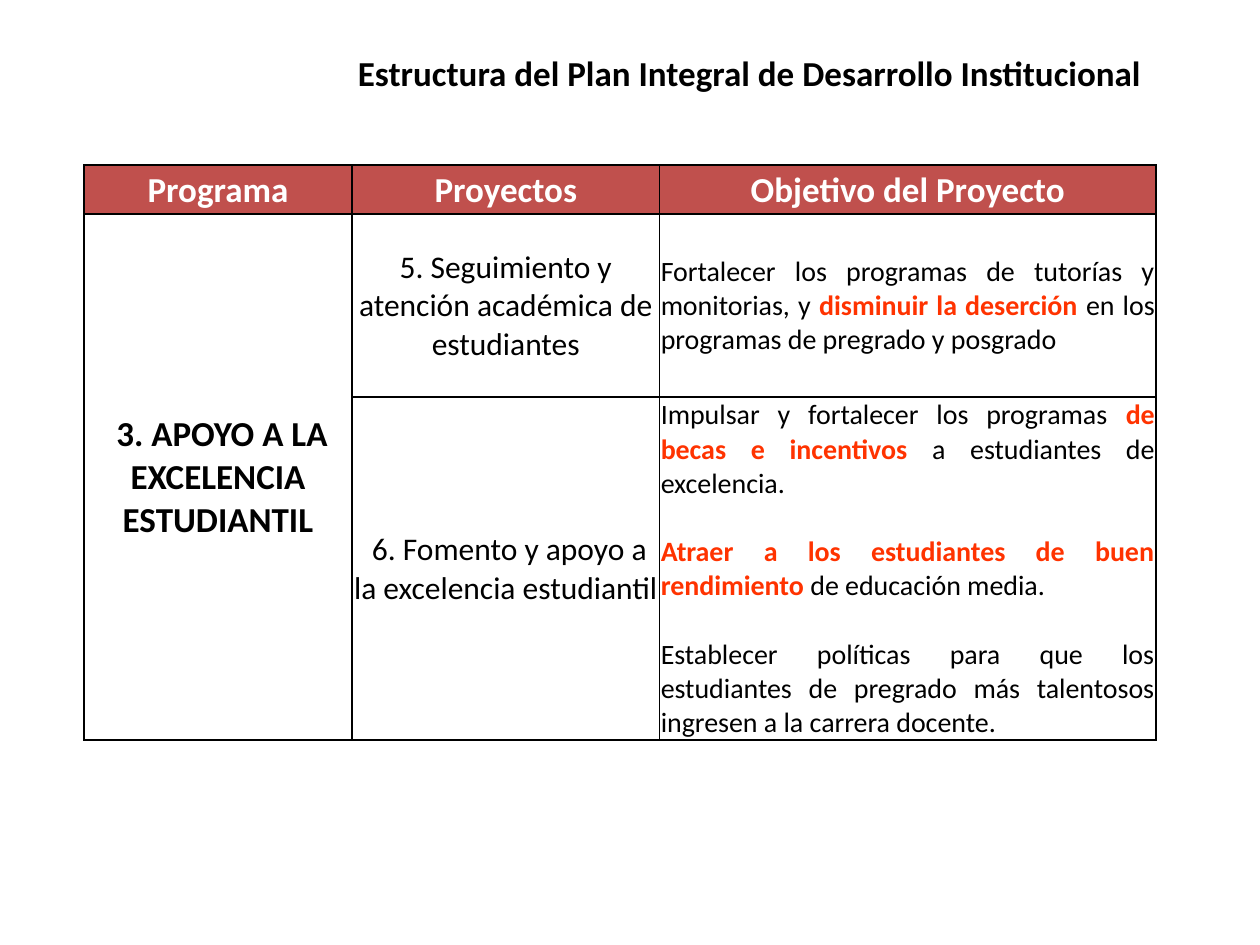
from dataclasses import dataclass

from lxml.etree import SubElement
from pptx import Presentation
from pptx.dml.color import RGBColor
from pptx.enum.text import MSO_ANCHOR as Anchor, PP_ALIGN as Align
from pptx.oxml.ns import qn
from pptx.table import Table, _Cell as Cell
from pptx.text.text import _Paragraph as Paragraph
from pptx.util import Pt


@dataclass(frozen=True)
class Theme:
    font: str = "Calibri"
    black: str = "000000"
    white: str = "FFFFFF"
    header: str = "C0504D"
    accent: str = "FF3300"
    heading_size: float = 20
    project_size: float = 18
    goal_size: float = 16
    goal_gap: float = 19.5
    border: float = 1
    inset: float = 0.72


THEME = Theme()


@dataclass(frozen=True)
class Span:
    text: str
    color: str = THEME.black
    bold: bool = False


@dataclass(frozen=True)
class Entry:
    row: int
    column: int
    size: float
    paragraphs: list[list[Span]]
    align: Align = Align.CENTER
    fill: str | None = None


def accent(text: str) -> Span:
    return Span(text, THEME.accent, True)


HEADINGS = ["Programa", "Proyectos", "Objetivo del Proyecto"]
PROGRAM = [[Span(" "), Span("3. APOYO A LA EXCELENCIA ESTUDIANTIL", bold=True)]]
PROJECTS = [
    "5. Seguimiento y atención académica de estudiantes",
    " 6. Fomento y apoyo a la excelencia estudiantil",
]
GOALS = [
    [
        [
            Span("Fortalecer los programas de tutorías y monitorias, y "),
            accent("disminuir la deserción "),
            Span("en los programas de pregrado y posgrado"),
        ],
    ],
    [
        [
            Span("Impulsar y fortalecer los programas "),
            accent("de becas e incentivos"),
            Span(" a estudiantes de excelencia."),
        ],
        [
            accent("Atraer a los estudiantes de buen rendimiento "),
            Span("de educación media."),
        ],
        [
            Span("Establecer políticas para que los estudiantes de pregrado "
                 "más talentosos ingresen a la carrera docente."),
        ],
    ],
]
ENTRIES = [
    *(Entry(0, column, THEME.heading_size, [[Span(heading, THEME.white, True)]],
            fill=THEME.header)
      for column, heading in enumerate(HEADINGS)),
    Entry(1, 0, THEME.heading_size, PROGRAM),
    *(Entry(row, 1, THEME.project_size, [[Span(project)]])
      for row, project in enumerate(PROJECTS, 1)),
    *(Entry(row, 2, THEME.goal_size, goals, Align.JUSTIFY)
      for row, goals in enumerate(GOALS, 1)),
]
COLUMN_WIDTHS = [153.2, 175.7, 283.7]
ROW_HEIGHTS = [28, 104.5, 196]


def write_spans(paragraph: Paragraph, spans: list[Span], size: float) -> None:
    for span in spans:
        run = paragraph.add_run()
        run.text = span.text
        run.font.name = THEME.font
        run.font.size = Pt(size)
        run.font.bold = span.bold
        run.font.color.rgb = RGBColor.from_string(span.color)


def format_cell(cell: Cell) -> None:
    """Set borders, margins and an empty fill."""
    properties = cell._tc.get_or_add_tcPr()
    for side in ("a:lnL", "a:lnR", "a:lnT", "a:lnB"):
        line = SubElement(properties, qn(side), w=str(Pt(THEME.border)))
        SubElement(SubElement(line, qn("a:solidFill")), qn("a:srgbClr"),
                   val=THEME.black)
    cell.fill.background()
    cell.margin_left = cell.margin_right = cell.margin_top = Pt(THEME.inset)
    cell.margin_bottom = 0
    cell.vertical_anchor = Anchor.MIDDLE


def fill_entry(table: Table, entry: Entry) -> None:
    cell = table.cell(entry.row, entry.column)
    if entry.fill:
        cell.fill.solid()
        cell.fill.fore_color.rgb = RGBColor.from_string(entry.fill)
    frame = cell.text_frame
    for index, spans in enumerate(entry.paragraphs):
        paragraph = frame.add_paragraph() if index else frame.paragraphs[0]
        paragraph.alignment = entry.align
        if index:
            paragraph.space_before = Pt(THEME.goal_gap)
        write_spans(paragraph, spans, entry.size)


def add_plan_table(slide) -> None:
    table = slide.shapes.add_table(
        len(ROW_HEIGHTS), len(COLUMN_WIDTHS), Pt(48), Pt(94.3),
        Pt(sum(COLUMN_WIDTHS)), Pt(sum(ROW_HEIGHTS))).table
    table.first_row = table.horz_banding = False
    for column, width in zip(table.columns, COLUMN_WIDTHS):
        column.width = Pt(width)
    for row, height in zip(table.rows, ROW_HEIGHTS):
        row.height = Pt(height)
    for cell in table.iter_cells():
        format_cell(cell)
    table.cell(1, 0).merge(table.cell(2, 0))
    for entry in ENTRIES:
        fill_entry(table, entry)


def add_title(slide) -> None:
    title = slide.shapes.title
    title.left, title.top, title.width, title.height = (
        Pt(156.2), Pt(26), Pt(544.3), Pt(41.8))
    frame = title.text_frame
    frame.word_wrap = True
    frame.vertical_anchor = Anchor.TOP
    heading = frame.paragraphs[0]
    heading.alignment = Align.CENTER
    write_spans(
        heading,
        [Span("Estructura del Plan Integral de Desarrollo Institucional", bold=True)],
        THEME.heading_size)


def main() -> None:
    deck = Presentation()
    deck.slide_width, deck.slide_height = Pt(720), Pt(540)
    slide = deck.slides.add_slide(deck.slide_layouts[5])
    add_title(slide)
    add_plan_table(slide)
    deck.save("out.pptx")


if __name__ == "__main__":
    main()
